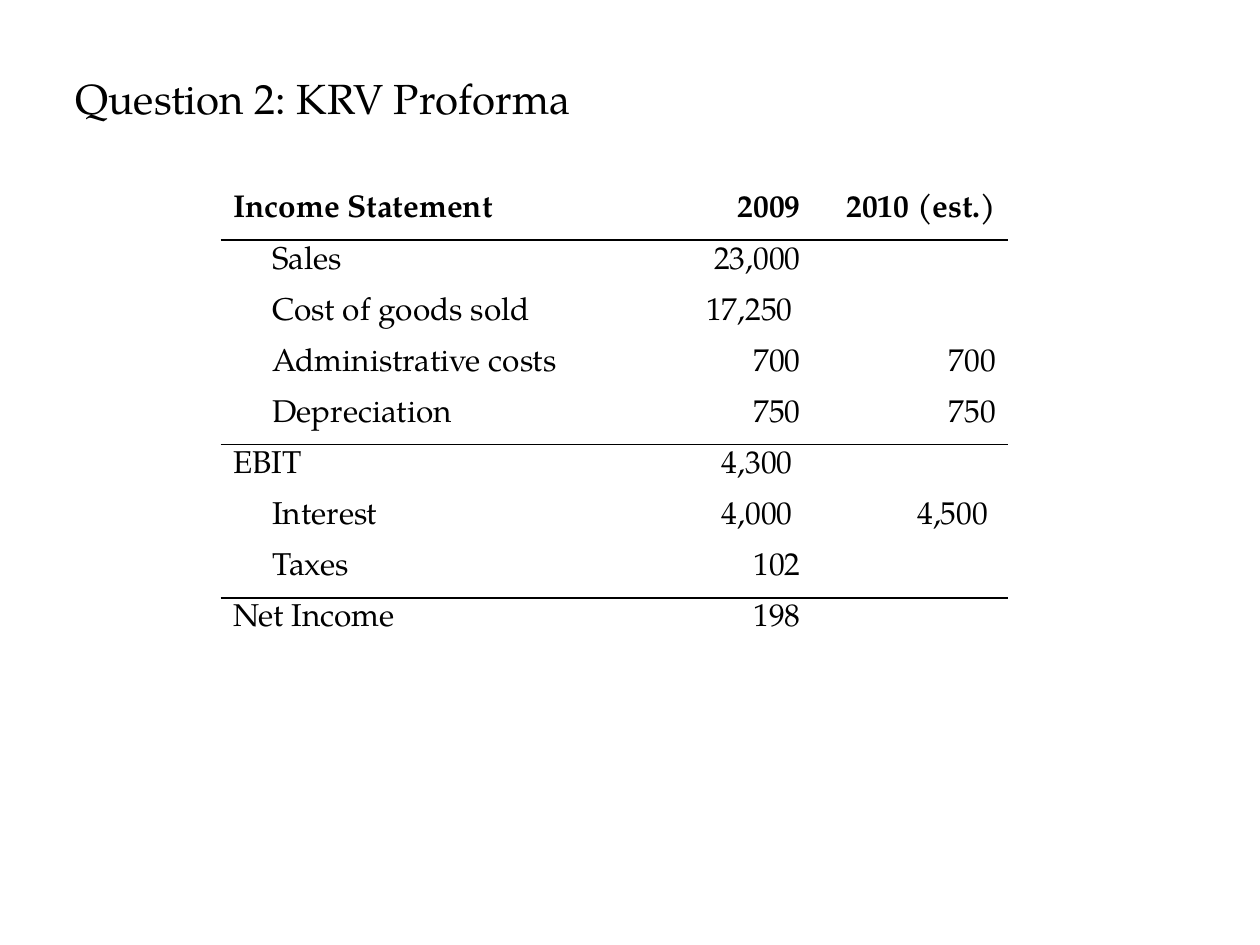
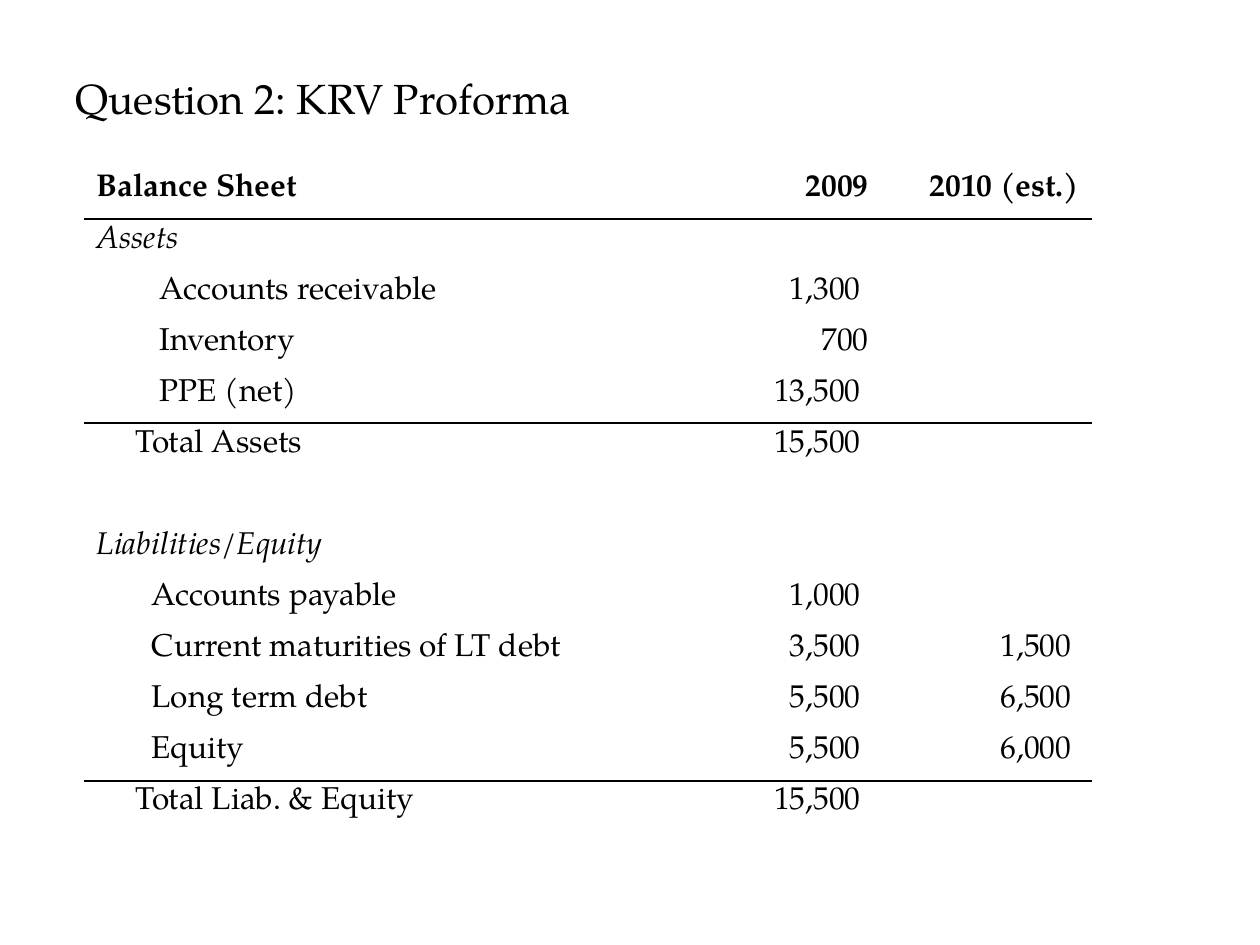
from dataclasses import dataclass

from lxml.etree import SubElement
from pptx import Presentation
from pptx.dml.color import RGBColor
from pptx.enum.text import MSO_ANCHOR, PP_ALIGN
from pptx.oxml import parse_xml
from pptx.oxml.ns import nsdecls, qn
from pptx.util import Cm, Pt


@dataclass(frozen=True)
class Theme:
    font: str = "TeX Gyre Pagella"
    ink: str = "000000"
    title_size: int = 24
    table_size: int = 18
    rule_width: int = 1
    row_height: float = 1.03
    cell_margin: float = 0.25
    plain_table_style: str = "{2D5ABB26-0587-4C30-8999-92F81FD0307C}"


@dataclass(frozen=True)
class Line:
    label: str = ""
    current: str = ""
    estimate: str = ""
    indent: float = 0
    bold: bool = False
    italic: bool = False
    ruled: bool = False


@dataclass(frozen=True)
class Statement:
    left: float
    top: float
    columns: tuple
    lines: tuple


THEME = Theme()
TITLE = "Question 2: KRV Proforma"
TITLE_BOX = (1.27, 0.76, 22.86, 2.41)
TOTAL_INDENT = 0.79
LIABILITY_INDENT = 1.11
ASSET_INDENT = 1.27


def heading(label):
    return Line(label, "2009", "2010 (est.)", bold=True, ruled=True)


def item(label, current, estimate="", indent=TOTAL_INDENT, ruled=False):
    return Line(label, current, estimate, indent, ruled=ruled)


def asset(label, current, ruled=False):
    return item(label, current, indent=ASSET_INDENT, ruled=ruled)


def liability(label, current, estimate="", ruled=False):
    return item(label, current, estimate, LIABILITY_INDENT, ruled)


INCOME_STATEMENT = Statement(4.45, 3.81, (7.11, 4.83, 3.94), (
    heading("Income Statement"),
    item("Sales", "23,000"),
    item("Cost of goods sold", "17,250 "),
    item("Administrative costs", "700", "700"),
    item("Depreciation", "750", "750", ruled=True),
    Line("EBIT", "4,300 "),
    item("Interest", "4,000 ", "4,500 "),
    item("Taxes", "102", ruled=True),
    Line("Net Income", "198"),
))

BALANCE_SHEET = Statement(1.7, 3.38, (11, 5.06, 4.25), (
    heading("Balance Sheet"),
    Line("Assets", italic=True),
    asset("Accounts receivable", "1,300 "),
    asset("Inventory", "700"),
    asset("PPE (net)", "13,500 ", ruled=True),
    item("Total Assets", "15,500 "),
    Line(),
    Line("Liabilities/Equity", italic=True),
    liability("Accounts payable", "1,000 "),
    liability("Current maturities of LT debt", "3,500 ", "1,500 "),
    liability("Long term debt", "5,500 ", "6,500 "),
    liability("Equity", "5,500 ", "6,000 ", ruled=True),
    item("Total Liab. & Equity", "15,500 "),
))


def add_run(paragraph, text, size, bold=False, italic=False):
    run = paragraph.add_run()
    run.text = text
    run.font.name = THEME.font
    run.font.size = Pt(size)
    run.font.bold = bold
    run.font.italic = italic
    run.font.color.rgb = RGBColor.from_string(THEME.ink)


def add_title(slide, box):
    title = slide.shapes.title
    title.left, title.top, title.width, title.height = map(Cm, box)
    title.text_frame.vertical_anchor = MSO_ANCHOR.MIDDLE
    paragraph = title.text_frame.paragraphs[0]
    paragraph.alignment = PP_ALIGN.LEFT
    add_run(paragraph, TITLE, THEME.title_size)


def set_border(cell, side, ruled):
    border = parse_xml(f'<a:{side} {nsdecls("a")}/>')
    if ruled:
        border.set("w", str(Pt(THEME.rule_width)))
        fill = SubElement(border, qn("a:solidFill"))
        SubElement(fill, qn("a:srgbClr"), val=THEME.ink)
    else:
        SubElement(border, qn("a:noFill"))
    cell._tc.get_or_add_tcPr().insert(0, border)


def fill_cell(cell, text, line, is_label):
    cell.fill.background()
    cell.margin_left = Cm(THEME.cell_margin + (line.indent if is_label else 0))
    cell.margin_right = Cm(THEME.cell_margin)
    paragraph = cell.text_frame.paragraphs[0]
    paragraph.alignment = PP_ALIGN.LEFT if is_label else PP_ALIGN.RIGHT
    paragraph.font.size = Pt(THEME.table_size)
    if text:
        add_run(paragraph, text, THEME.table_size, line.bold, line.italic)


def add_statement(slide, statement):
    lines = statement.lines
    frame = slide.shapes.add_table(
        len(lines), len(statement.columns), Cm(statement.left), Cm(statement.top),
        Cm(sum(statement.columns)), Cm(THEME.row_height * len(lines)))
    table = frame.table
    table.first_row = table.horz_banding = False
    table._tbl.tblPr.find(qn("a:tableStyleId")).text = THEME.plain_table_style
    for column, width in zip(table.columns, statement.columns):
        column.width = Cm(width)
    for index, line in enumerate(lines):
        table.rows[index].height = Cm(THEME.row_height)
        ruled_above = index > 0 and lines[index - 1].ruled
        for position, text in enumerate((line.label, line.current, line.estimate)):
            cell = table.cell(index, position)
            fill_cell(cell, text, line, position == 0)
            set_border(cell, "lnB", line.ruled)
            set_border(cell, "lnT", ruled_above)


def add_statement_slide(presentation, statement):
    slide = presentation.slides.add_slide(
        presentation.slide_layouts.get_by_name("Title Only"))
    add_title(slide, TITLE_BOX)
    add_statement(slide, statement)


def main():
    presentation = Presentation()
    presentation.slide_width = Cm(25.4)
    presentation.slide_height = Cm(19.05)
    for statement in (INCOME_STATEMENT, BALANCE_SHEET):
        add_statement_slide(presentation, statement)
    presentation.save("out.pptx")


if __name__ == "__main__":
    main()
